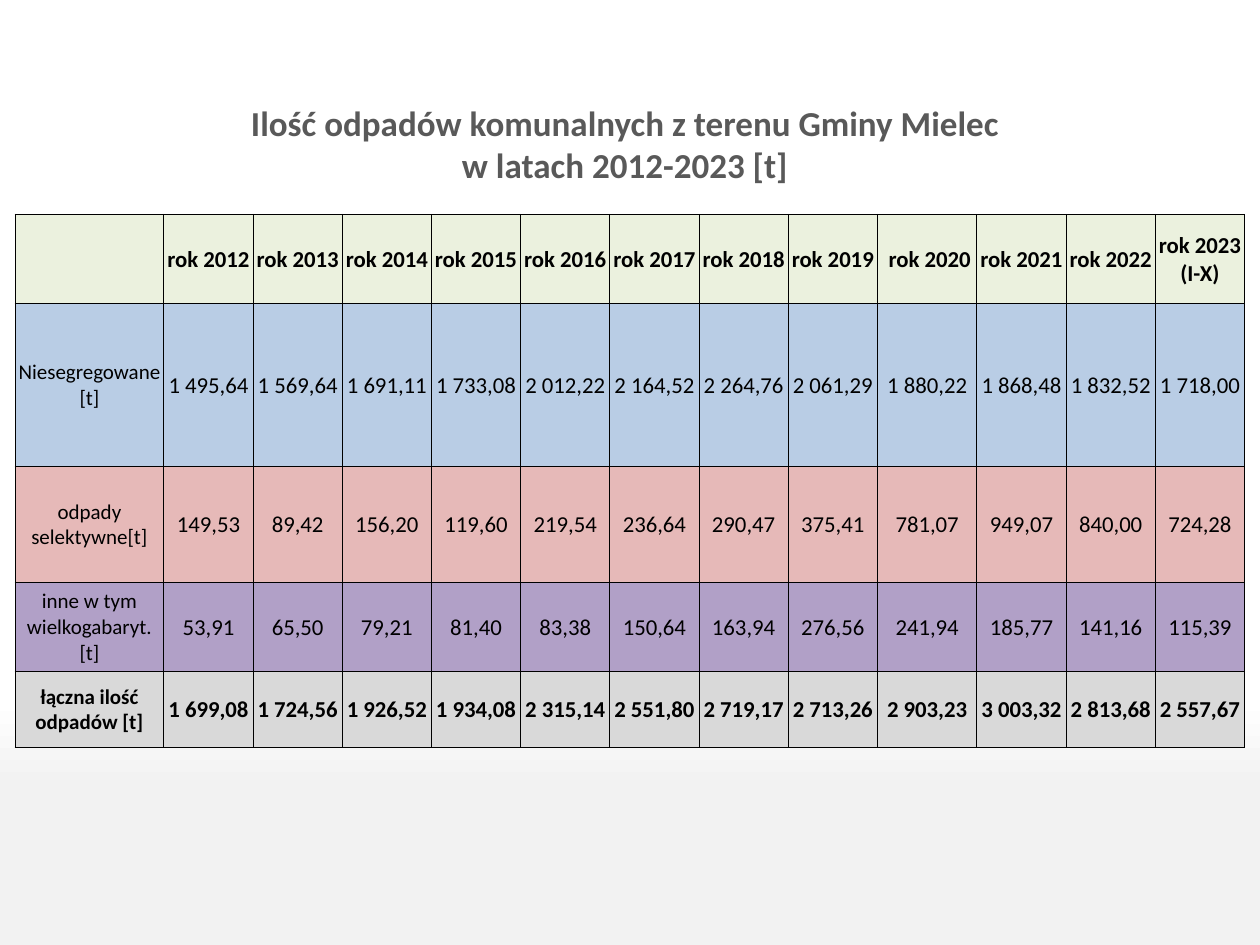
from lxml.etree import SubElement
from pptx import Presentation
from pptx.dml.color import RGBColor
from pptx.enum.text import MSO_ANCHOR, MSO_AUTO_SIZE, PP_ALIGN
from pptx.oxml import parse_xml
from pptx.oxml.ns import nsdecls, qn
from pptx.util import Inches, Pt

# Content
TITLE = "Ilość odpadów komunalnych z terenu Gminy Mielec w latach 2012-2023 [t]"
YEARS = ["rok 2012", "rok 2013", "rok 2014", "rok 2015", "rok 2016", "rok 2017",
         "rok 2018", "rok 2019", " rok 2020", "rok 2021", "rok 2022", "rok 2023 (I-X)"]
MIXED = ["1 495,64", "1 569,64", "1 691,11", "1 733,08", "2 012,22", "2 164,52",
         "2 264,76", "2 061,29", "1 880,22", "1 868,48", "1 832,52", "1 718,00"]
SORTED = ["149,53", "89,42", "156,20", "119,60", "219,54", "236,64",
          "290,47", "375,41", "781,07", "949,07", "840,00", "724,28"]
OTHER = ["53,91", "65,50", "79,21", "81,40", "83,38", "150,64",
         "163,94", "276,56", "241,94", "185,77", "141,16", "115,39"]
TOTAL = ["1 699,08", "1 724,56", "1 926,52", "1 934,08", "2 315,14", "2 551,80",
         "2 719,17", "2 713,26", "2 903,23", "3 003,32", "2 813,68", "2 557,67"]
# label, values, fill name, bold, height
ROWS = [
    ("", YEARS, "head", True, 0.71),
    ("Niesegregowane [t]", MIXED, "mixed", False, 1.29),
    ("odpady selektywne[t]", SORTED, "sorted", False, 0.92),
    ("inne w tym wielkogabaryt. [t]", OTHER, "other", False, 0.71),
    ("łączna ilość odpadów [t]", TOTAL, "total", True, 0.6),
]
COLORS = {"head": "EBF1DE", "mixed": "B9CDE5", "sorted": "E6B9B8", "other": "B1A0C7",
          "total": "D9D9D9", "title": "595959", "ink": "000000",
          "white": "FFFFFF", "gray": "F2F2F2"}
STOPS = [(0, "white"), (74, "white"), (83, "gray"), (100, "gray")]
FONT = "Calibri"

# Grid
WIDE, HIGH = 10, 7.5
LEFT, TOP, SPAN = 0.12, 1.7, 9.76
LABEL, BROAD = 1.18, 0.79
BROAD_COL = 9
THIN = (SPAN - LABEL - BROAD) / (len(YEARS) - 1)


def style(para, size, bold, color):
    para.alignment = PP_ALIGN.CENTER
    for run in para.runs:
        font = run.font
        font.name, font.size, font.bold = FONT, Pt(size), bold
        font.color.rgb = RGBColor.from_string(COLORS[color])


def border(cell):
    props = cell._tc.get_or_add_tcPr()
    for spot, side in enumerate(("lnL", "lnR", "lnT", "lnB")):
        props.insert(spot, parse_xml(
            f'<a:{side} {nsdecls("a")} w="{Pt(0.5)}"><a:solidFill>'
            f'<a:srgbClr val="{COLORS["ink"]}"/></a:solidFill></a:{side}>'))


deck = Presentation()
deck.slide_width, deck.slide_height = Inches(WIDE), Inches(HIGH)
slide = deck.slides.add_slide(deck.slide_layouts[6])

# Background fade, top to bottom
back = slide.background.fill
back.gradient()
back.gradient_angle = 270
stops = slide.element.find(".//" + qn("a:gsLst"))
for old in list(stops):
    stops.remove(old)
for share, name in STOPS:
    stop = SubElement(stops, qn("a:gs"), pos=str(share * 1000))
    SubElement(stop, qn("a:srgbClr"), val=COLORS[name])

# Title
box = slide.shapes.add_textbox(Inches(1.77), Inches(0.76), Inches(6.38), Inches(0.77))
frame = box.text_frame
frame.word_wrap = True
frame.auto_size = MSO_AUTO_SIZE.SHAPE_TO_FIT_TEXT
frame.text = TITLE
style(frame.paragraphs[0], 20, True, "title")

# Table
tall = sum(row[-1] for row in ROWS)
table = slide.shapes.add_table(len(ROWS), len(YEARS) + 1, Inches(LEFT), Inches(TOP),
                               Inches(SPAN), Inches(tall)).table
table.first_row = table.horz_banding = False
for c, col in enumerate(table.columns):
    col.width = Inches({0: LABEL, BROAD_COL: BROAD}.get(c, THIN))
for r, (label, values, fill, bold, height) in enumerate(ROWS):
    table.rows[r].height = Inches(height)
    for c, text in enumerate([label] + values):
        cell = table.cell(r, c)
        cell.margin_left = cell.margin_right = cell.margin_top = Inches(0.01)
        cell.margin_bottom = 0
        cell.vertical_anchor = MSO_ANCHOR.MIDDLE
        cell.fill.solid()
        cell.fill.fore_color.rgb = RGBColor.from_string(COLORS[fill])
        border(cell)
        cell.text_frame.text = text
        style(cell.text_frame.paragraphs[0], 13 if c else 12, bold, "ink")

deck.save("out.pptx")
